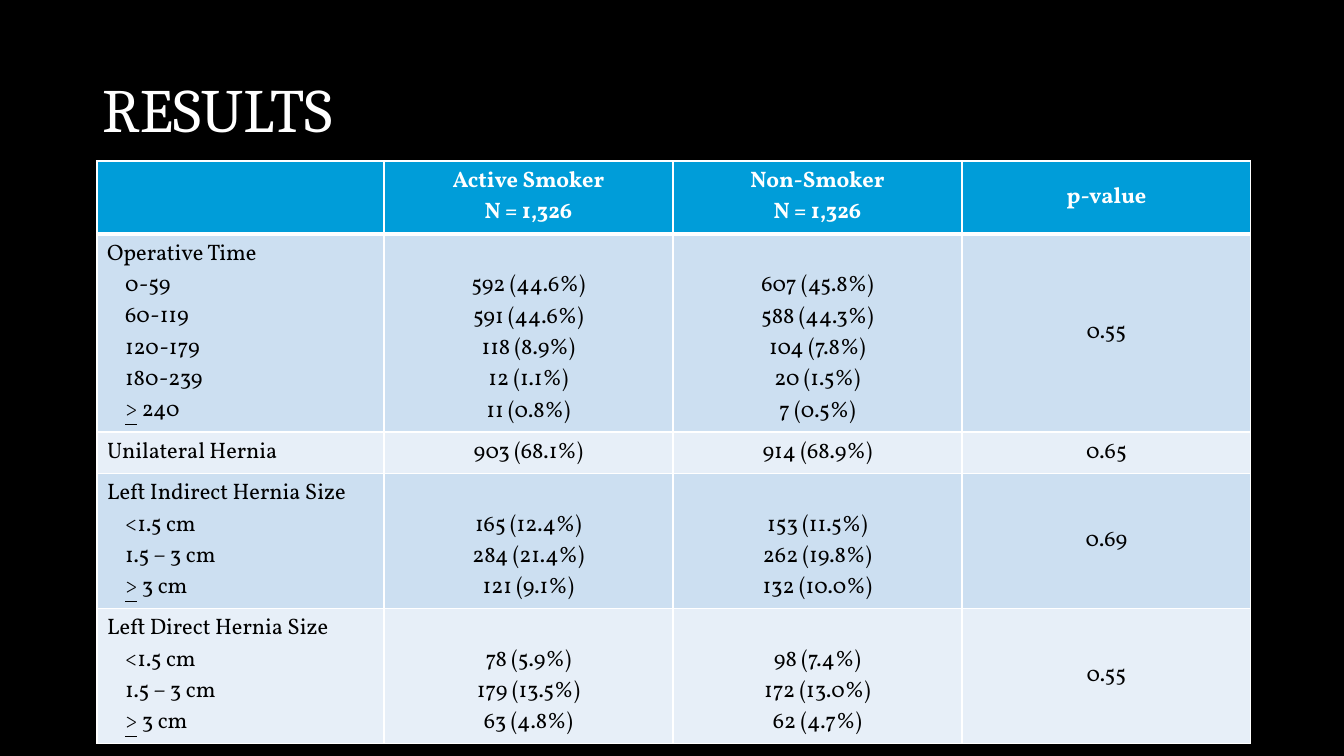
from dataclasses import dataclass

from lxml import etree
from pptx import Presentation
from pptx import util as u
from pptx.dml.color import RGBColor
from pptx.enum import text
from pptx.oxml import ns

PX_PER_INCH = 100.8
COLORS = {
    "background": "000000",
    "light": "FFFFFF",
    "dark": "000000",
    "header": "009DD9",
    "odd": "CCDFF1",
    "even": "E7EFF8",
}
TITLE_FONT, TABLE_FONT = "Cambria", "Vollkorn"
COLUMN_WIDTHS = [287, 289, 289, 289]
INDENT = 18


@dataclass
class ResultRow:
    height: int
    labels: list[str]
    smokers: list[str]
    non_smokers: list[str]
    p_value: str


SIZES = ["<1.5 cm", "1.5 – 3 cm", "> 3 cm"]
HEADER = ResultRow(73, [], ["Active Smoker", "N = 1,326"],
                   ["Non-Smoker", "N = 1,326"], "p-value")
RESULTS = [
    ResultRow(
        198,
        ["Operative Time", "0-59", "60-119", "120-179", "180-239", "> 240"],
        ["592 (44.6%)", "591 (44.6%)", "118 (8.9%)", "12 (1.1%)", "11 (0.8%)"],
        ["607 (45.8%)", "588 (44.3%)", "104 (7.8%)", "20 (1.5%)", "7 (0.5%)"],
        "0.55"),
    ResultRow(41, ["Unilateral Hernia"], ["903 (68.1%)"], ["914 (68.9%)"], "0.65"),
    ResultRow(
        135, ["Left Indirect Hernia Size", *SIZES],
        ["165 (12.4%)", "284 (21.4%)", "121 (9.1%)"],
        ["153 (11.5%)", "262 (19.8%)", "132 (10.0%)"], "0.69"),
    ResultRow(
        135, ["Left Direct Hernia Size", *SIZES],
        ["78 (5.9%)", "179 (13.5%)", "63 (4.8%)"],
        ["98 (7.4%)", "172 (13.0%)", "62 (4.7%)"], "0.55"),
]


def px(length: int) -> int:
    return u.Emu(round(length * 914400 / PX_PER_INCH))


def rgb(name: str) -> RGBColor:
    return RGBColor.from_string(COLORS[name])


def format_run(run, font: str, size: int, color: str, bold: bool = False) -> None:
    run.font.name = font
    run.font.size = u.Pt(size)
    run.font.color.rgb = rgb(color)
    run.font.bold = bold


def set_borders(cell, top: int, bottom: int) -> None:
    """Draw the four borders, with top and bottom widths in points."""
    properties = cell._tc.get_or_add_tcPr()
    widths = {"lnL": 1, "lnR": 1, "lnT": top, "lnB": bottom}
    for position, (side, width) in enumerate(widths.items()):
        line = etree.Element(ns.qn(f"a:{side}"), w=str(u.Pt(width)))
        fill = etree.SubElement(line, ns.qn("a:solidFill"))
        etree.SubElement(fill, ns.qn("a:srgbClr"), val=COLORS["light"])
        properties.insert(position, line)


def fill_cell(cell, lines: list[str], is_label: bool, is_header: bool) -> None:
    frame = cell.text_frame
    frame.text = "\n".join(lines)
    for index, paragraph in enumerate(frame.paragraphs):
        paragraph.alignment = text.PP_ALIGN.LEFT if is_label else text.PP_ALIGN.CENTER
        if is_label and index:
            paragraph._p.get_or_add_pPr().set("marL", str(px(INDENT)))
        # An underlined ">" stands for "at least"
        if paragraph.text.startswith(">"):
            rest = paragraph.text[1:]
            paragraph.text = ">"
            paragraph.runs[0].font.underline = True
            paragraph.add_run().text = rest
        for run in paragraph.runs:
            format_run(run, TABLE_FONT, 16, "light" if is_header else "dark", is_header)


def add_results_table(slide) -> None:
    rows = [HEADER, *RESULTS]
    table = slide.shapes.add_table(
        len(rows), len(COLUMN_WIDTHS), px(97), px(161),
        px(sum(COLUMN_WIDTHS)), px(sum(row.height for row in rows))).table
    for column, width in zip(table.columns, COLUMN_WIDTHS):
        column.width = px(width)
    for row_index, row in enumerate(rows):
        table.rows[row_index].height = px(row.height)
        is_header = row_index == 0
        color = "header" if is_header else ("odd" if row_index % 2 else "even")
        # Counts sit at the bottom, level with their indented labels
        counts_anchor = text.MSO_ANCHOR.MIDDLE if is_header else text.MSO_ANCHOR.BOTTOM
        anchors = [text.MSO_ANCHOR.TOP, counts_anchor, counts_anchor,
                   text.MSO_ANCHOR.MIDDLE]
        columns = [row.labels, row.smokers, row.non_smokers, [row.p_value]]
        for column_index, (lines, anchor) in enumerate(zip(columns, anchors)):
            cell = table.cell(row_index, column_index)
            cell.vertical_anchor = anchor
            cell.fill.solid()
            cell.fill.fore_color.rgb = rgb(color)
            set_borders(cell, 3 if row_index == 1 else 1, 3 if is_header else 1)
            if lines:
                fill_cell(cell, lines, column_index == 0, is_header)


def add_title(slide) -> None:
    title = slide.shapes.title
    title.left, title.top, title.width, title.height = map(px, (92, 40, 1159, 146))
    frame = title.text_frame
    frame.text = "RESULTS"
    frame.vertical_anchor = text.MSO_ANCHOR.MIDDLE
    paragraph = frame.paragraphs[0]
    paragraph.alignment = text.PP_ALIGN.LEFT
    paragraph.line_spacing = 0.9
    format_run(paragraph.runs[0], TITLE_FONT, 44, "light")


def main() -> None:
    presentation = Presentation()
    presentation.slide_width, presentation.slide_height = px(1344), px(756)
    slide = presentation.slides.add_slide(presentation.slide_layouts[5])
    slide.background.fill.solid()
    slide.background.fill.fore_color.rgb = rgb("background")
    add_title(slide)
    add_results_table(slide)
    presentation.save("out.pptx")


if __name__ == "__main__":
    main()
